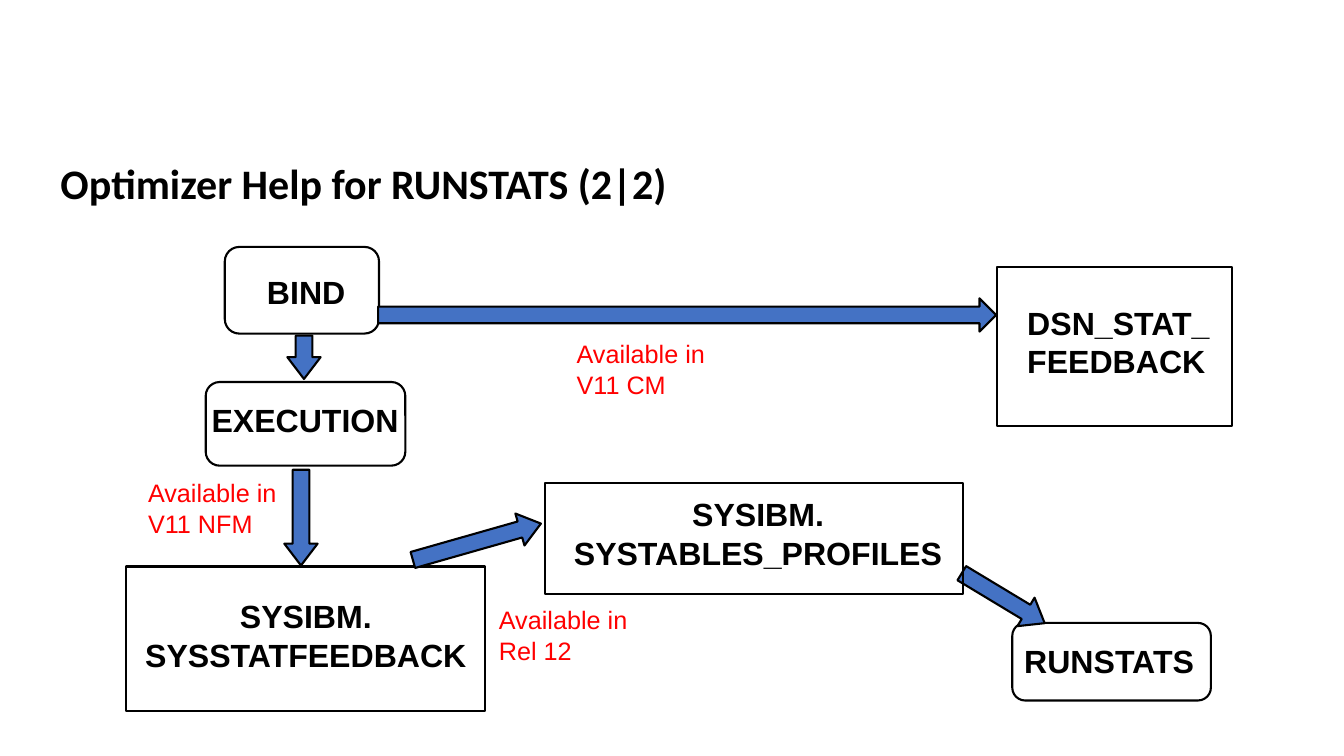
from dataclasses import dataclass

from pptx import Presentation
from pptx.dml.color import RGBColor
from pptx.enum.shapes import MSO_SHAPE
from pptx.enum.text import MSO_ANCHOR, MSO_AUTO_SIZE, PP_ALIGN
from pptx.util import Emu, Pt

RECT, ROUND = MSO_SHAPE.RECTANGLE, MSO_SHAPE.ROUNDED_RECTANGLE
ARROW = MSO_SHAPE.RIGHT_ARROW
LEFT, CENTER = PP_ALIGN.LEFT, PP_ALIGN.CENTER
MIDDLE = MSO_ANCHOR.MIDDLE
NO_FIT = MSO_AUTO_SIZE.NONE
TITLE_ONLY = 5
PX = 9144  # EMU per px, 100 px to the inch


@dataclass(frozen=True)
class Theme:
    ink: RGBColor = RGBColor(0x00, 0x00, 0x00)
    note: RGBColor = RGBColor(0xFF, 0x00, 0x00)
    arrow: RGBColor = RGBColor(0x44, 0x72, 0xC4)
    line: Pt = Pt(1.5)
    title_size: Pt = Pt(30)
    node_size: Pt = Pt(22.9)
    note_size: Pt = Pt(18)
    title_font: str = "Calibri"
    body_font: str = "Arial"


THEME = Theme()
TITLE_STYLE = dict(name=THEME.title_font, size=THEME.title_size, bold=True)
NODE_STYLE = dict(name=THEME.body_font, size=THEME.node_size, bold=True)
NOTE_STYLE = dict(name=THEME.body_font, size=THEME.note_size, bold=False)


def px(*lengths):
    return [Emu(n * PX) for n in lengths]


def write(tf, text, style, color, align=LEFT):
    tf.word_wrap = True
    p = tf.paragraphs[0]
    p.text = text
    p.alignment = align
    for r in p.runs:
        for key, value in style.items():
            setattr(r.font, key, value)
        r.font.color.rgb = color
    return p


def add_title(s, text, box):
    sp = s.shapes.title
    sp.left, sp.top, sp.width, sp.height = px(*box)
    tf = sp.text_frame
    tf.auto_size = NO_FIT
    tf.vertical_anchor = MIDDLE
    write(tf, text, TITLE_STYLE, THEME.ink).line_spacing = 0.9


def add_outlined(s, kind, box):
    sp = s.shapes.add_shape(kind, *px(*box))
    sp.shadow.inherit = False
    sp.fill.background()
    sp.line.color.rgb = THEME.ink
    sp.line.width = THEME.line
    return sp


def add_label(s, text, box, style, color, align=LEFT):
    sp = s.shapes.add_textbox(*px(*box))
    write(sp.text_frame, text, style, color, align)


def add_node(s, kind, box, text, label_box, align=LEFT):
    add_outlined(s, kind, box)
    add_label(s, text, label_box, NODE_STYLE, THEME.ink, align)


def add_note(s, text, box):
    add_label(s, text, box, NOTE_STYLE, THEME.note)


def add_arrow(s, box, rotation=0, head=0.655):
    sp = add_outlined(s, ARROW, box)
    sp.fill.solid()
    sp.fill.fore_color.rgb = THEME.arrow
    sp.adjustments[1] = head
    sp.rotation = rotation


def main():
    prs = Presentation()
    prs.slide_width, prs.slide_height = px(1333, 750)
    s = prs.slides.add_slide(prs.slide_layouts[TITLE_ONLY])
    add_title(s, "Optimizer Help for RUNSTATS (2|2)", (50, 141, 1072, 87))

    # Bind and its feedback table
    add_node(s, ROUND, (223, 245, 153, 86), "BIND", (255, 265, 120, 50))
    add_node(s, RECT, (989, 265, 233, 158), "DSN_STAT_FEEDBACK", (1009, 296, 213, 89))
    add_arrow(s, (375, 296, 613, 33), head=0.5)
    add_note(s, "Available in V11 CM", (562, 331, 168, 72))

    # Execution and the catalog feedback
    add_arrow(s, (280, 338, 43, 33), 90)
    add_node(s, ROUND, (204, 379, 198, 83), "EXECUTION", (200, 392, 235, 50))
    add_node(s, RECT, (125, 562, 356, 143), "SYSIBM.\nSYSSTATFEEDBACK",
             (127, 587, 353, 89), CENTER)
    add_arrow(s, (251, 497, 95, 33), 90)
    add_note(s, "Available in V11 NFM", (137, 469, 174, 72))

    # Profiles feeding statistics collection
    add_arrow(s, (407, 521, 132, 33), 344.1)
    add_node(s, ROUND, (1004, 618, 197, 77), "RUNSTATS", (1006, 631, 213, 50))
    add_arrow(s, (947, 577, 96, 33), 31.1)
    add_node(s, RECT, (541, 479, 414, 110), "SYSIBM.\nSYSTABLES_PROFILES",
             (554, 486, 396, 89), CENTER)
    add_note(s, "Available in Rel 12", (485, 595, 174, 72))

    prs.save("out.pptx")


if __name__ == "__main__":
    main()
